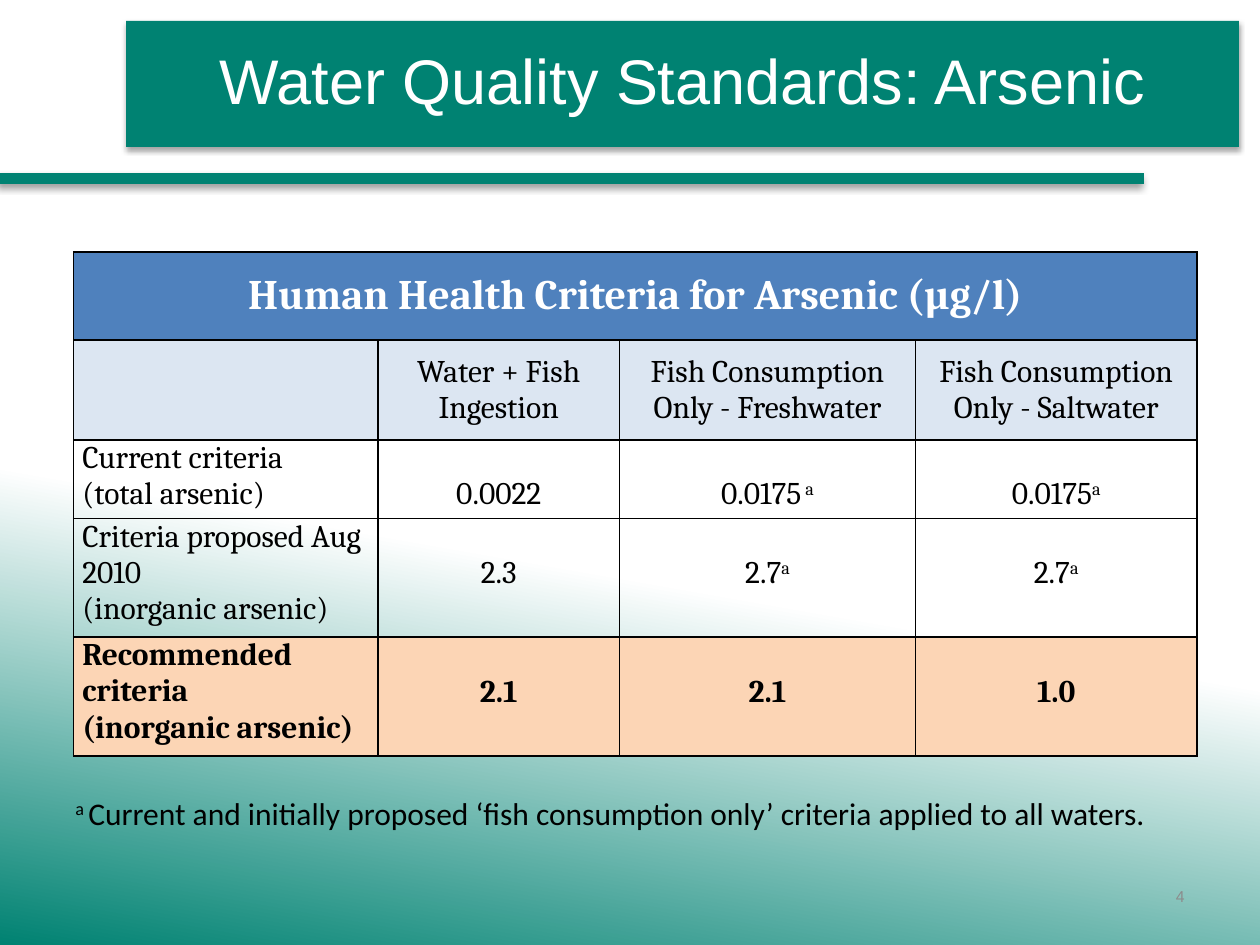
from lxml import etree
from pptx import Presentation
from pptx.dml.color import RGBColor
from pptx.enum.shapes import MSO_CONNECTOR
from pptx.enum.text import MSO_ANCHOR, PP_ALIGN
from pptx.oxml import parse_xml
from pptx.oxml.ns import nsdecls
from pptx.util import Inches, Pt

LEFT, MID, RIGHT = PP_ALIGN.LEFT, PP_ALIGN.CENTER, PP_ALIGN.RIGHT
TOP, CORE = MSO_ANCHOR.TOP, MSO_ANCHOR.MIDDLE
LINE = MSO_CONNECTOR.STRAIGHT
TEAL = RGBColor(0x00, 0x82, 0x72)
BLUE = RGBColor(0x4F, 0x81, 0xBD)
PALE = RGBColor(0xDC, 0xE6, 0xF2)
PEACH = RGBColor(0xFC, 0xD5, 0xB5)
WHITE = RGBColor(0xFF, 0xFF, 0xFF)
BLACK = RGBColor(0x00, 0x00, 0x00)
GREY = RGBColor(0x8C, 0x8C, 0x8C)
UNIT = Inches(1) / 12
SIDES = ("margin_left", "margin_top", "margin_right", "margin_bottom")


def write(host, text, form, font, color, align=LEFT):
    for key, val in form.items():
        setattr(host, key, val)
    frame = getattr(host, "text_frame", host)
    for row, line in enumerate(text.split("\n")):
        para = frame.add_paragraph() if row else frame.paragraphs[0]
        para.alignment = align
        for step, part in enumerate(line.split("^")):
            if not part:
                continue
            run = para.add_run()
            run.text = part
            for key, val in font.items():
                setattr(run.font, key, val)
            run.font.color.rgb = color
            if step % 2:
                run.font._element.set("baseline", "30000")


def shade(shape, blur, dist, turn, alpha):
    shape._element.spPr.append(parse_xml(
        f'<a:effectLst {nsdecls("a")}><a:outerShdw blurRad="{Pt(blur)}" '
        f'dist="{Pt(dist)}" dir="{turn * 60000}" rotWithShape="0">'
        f'<a:srgbClr val="{BLACK}"><a:alpha val="{alpha * 1000}"/></a:srgbClr>'
        '</a:outerShdw></a:effectLst>'))


deck = Presentation()
deck.slide_width, deck.slide_height = Inches(10), Inches(7.5)
slide = deck.slides.add_slide(deck.slide_layouts[5])
shapes = slide.shapes

back = slide.background.fill
back.gradient()
back.gradient_angle = 260
for stop, place, color in zip(back.gradient_stops, (0.59, 1), (WHITE, TEAL)):
    stop.position = place
    stop.color.rgb = color

title = shapes.title
spot = {"left": 12, "top": 2, "width": 106, "height": 12}
for key, val in spot.items():
    setattr(title, key, round(val * UNIT))
title.fill.solid()
title.fill.fore_color.rgb = TEAL
shade(title, 3.1, 1.8, 90, 35)
form = dict.fromkeys(SIDES, Inches(0.21)) | {"vertical_anchor": CORE, "word_wrap": True}
write(title.text_frame, "Water Quality Standards: Arsenic", form,
      {"name": "Arial", "size": Pt(36)}, WHITE, MID)
title.text_frame.paragraphs[0].line_spacing = 0.9

rule = shapes.add_connector(LINE, 0, round(17 * UNIT), round(109 * UNIT), round(17 * UNIT))
rule.line.color.rgb = TEAL
rule.line.width = Pt(6)
shade(rule, 4, 3, 135, 40)

COLS = (29, 23, 28.2, 26.8)
ROWS = (8.4, 9.5, 7.5, 11.3, 11.3)
FILLS = (BLUE, PALE, None, None, PEACH)
DATA = (
    ("Human Health Criteria for Arsenic (µg/l)", "", "", ""),
    ("", "Water + Fish Ingestion", "Fish Consumption Only - Freshwater",
     "Fish Consumption Only - Saltwater"),
    ("Current criteria\n(total arsenic)", "0.0022", "0.0175^ a", "0.0175^a"),
    ("Criteria proposed Aug 2010\n(inorganic arsenic)", "2.3", "2.7^a", "2.7^a"),
    ("Recommended criteria\n(inorganic arsenic)", "2.1", "2.1", "1.0"),
)
area = [round(val * UNIT) for val in (7, 24, sum(COLS), sum(ROWS))]
table = shapes.add_table(len(ROWS), len(COLS), *area).table
table.first_row = table.horz_banding = False
for col, wide in zip(table.columns, COLS):
    col.width = round(wide * UNIT)
for row, high in zip(table.rows, ROWS):
    row.height = round(high * UNIT)
table.cell(0, 0).merge(table.cell(0, len(COLS) - 1))

for r, (texts, fill) in enumerate(zip(DATA, FILLS)):
    for c, text in enumerate(texts):
        cell = table.cell(r, c)
        drop = Inches(0.29) if r > 1 and c else 0
        form = dict(zip(SIDES, (Inches(0.07), drop, Inches(0.07), 0)))
        form["vertical_anchor"] = TOP if r > 1 else CORE
        font = {"name": "Cambria", "size": Pt(18 if r else 24), "bold": r in (0, 4)}
        write(cell, text, form, font, BLACK if r else WHITE,
              LEFT if r > 1 and not c else MID)
        if fill:
            cell.fill.solid()
            cell.fill.fore_color.rgb = fill
        else:
            cell.fill.background()
        props = cell._tc.get_or_add_tcPr()
        for n, side in enumerate("LRTB"):
            edge = etree.fromstring(
                f'<a:ln{side} {nsdecls("a")} w="{Pt(1)}"><a:solidFill>'
                f'<a:srgbClr val="{BLACK}"/></a:solidFill></a:ln{side}>')
            props.insert(n, edge)

NOTES = (
    ((6, 75, 106, 4.8),
     "^a ^Current and initially proposed ‘fish consumption only’ criteria applied to all waters.",
     TOP, {"name": "Calibri", "size": Pt(18)}, BLACK, LEFT),
    ((86, 83, 28, 4.8), "4", CORE, {"name": "Arial", "size": Pt(9)}, GREY, RIGHT),
)
for area, text, anchor, font, color, align in NOTES:
    box = shapes.add_textbox(*[round(val * UNIT) for val in area])
    write(box.text_frame, text, {"word_wrap": True, "vertical_anchor": anchor},
          font, color, align)

deck.save("out.pptx")
